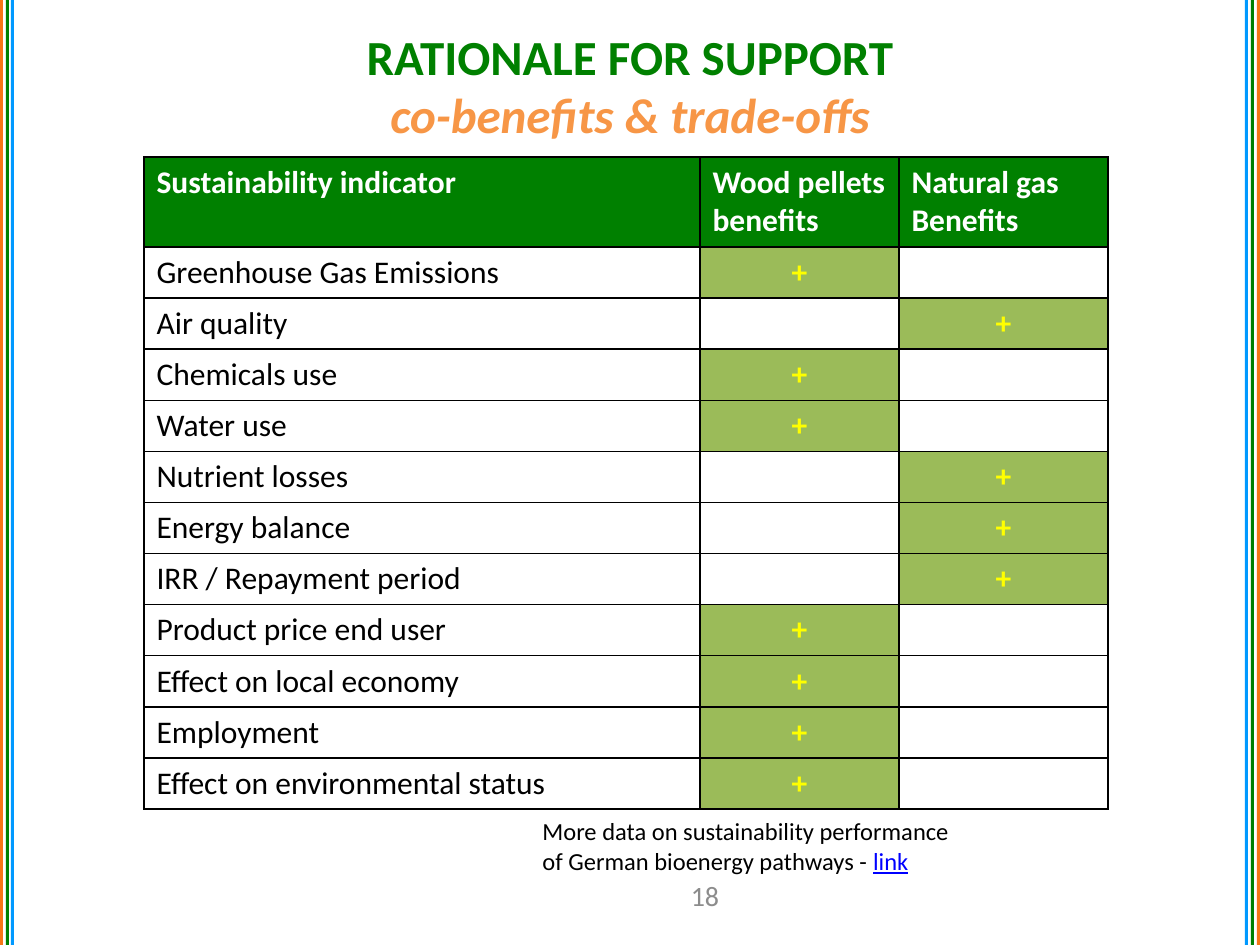
from lxml import etree
from pptx import Presentation
from pptx.dml.color import RGBColor
from pptx.enum.shapes import MSO_SHAPE
from pptx.enum.text import MSO_ANCHOR, PP_ALIGN
from pptx.oxml import parse_xml
from pptx.util import Pt

RECT = MSO_SHAPE.RECTANGLE
MIDDLE = MSO_ANCHOR.MIDDLE
LEFT, CENTER = PP_ALIGN.LEFT, PP_ALIGN.CENTER
NS = "http://schemas.openxmlformats.org/drawingml/2006/main"
PX = 914400 / 126
COLORS = {
    "orange": "F67616", "green": "008000", "blue": "0099FF", "peach": "F79646",
    "olive": "9BBB59", "yellow": "FFFF00", "white": "FFFFFF", "black": "000000",
    "gray": "8C8C8C", "link": "0000FF",
}


def px(*vals):
    return [round(val * PX) for val in vals]


def add_run(para, text, size, color, bold=False, italic=False):
    run = para.add_run()
    run.text = text
    font = run.font
    font.name, font.size = "Calibri", Pt(size)
    font.bold, font.italic = bold, italic
    font.color.rgb = RGBColor.from_string(COLORS[color])
    return run


deck = Presentation()
deck.slide_width, deck.slide_height = px(1260, 945)
slide = deck.slides.add_slide(deck.slide_layouts[5])
shapes = slide.shapes

stripes = [("orange", 0, 1257), ("green", 6, 1251), ("blue", 11, 1245)]
for color, *sides in stripes:
    for left in sides:
        bar = shapes.add_shape(RECT, *px(left, 0, 3, 945))
        bar.shadow.inherit = False
        bar.fill.solid()
        bar.fill.fore_color.rgb = RGBColor.from_string(COLORS[color])
        bar.line.fill.background()

title = shapes.title
title.left, title.top, title.width, title.height = px(63, 6, 1134, 158)
frame = title.text_frame
frame.vertical_anchor = MIDDLE
para = frame.paragraphs[0]
para.alignment = CENTER
add_run(para, "RATIONALE FOR SUPPORT", 28, "green", True)
para.add_line_break()
add_run(para, "co-benefits & trade-offs", 28, "peach", True, True)

heads = [["Sustainability indicator"], ["Wood pellets benefits"], ["Natural gas", "Benefits"]]
WOOD, GAS = 1, 2
rows = [
    ("Greenhouse Gas Emissions", WOOD),
    ("Air quality", GAS),
    ("Chemicals use", WOOD),
    ("Water use", WOOD),
    ("Nutrient losses", GAS),
    ("Energy balance", GAS),
    ("IRR / Repayment period", GAS),
    ("Product price end user", WOOD),
    ("Effect on local economy", WOOD),
    ("Employment", WOOD),
    ("Effect on environmental status", WOOD),
]
grid = [[(lines, "white", "green", True, LEFT) for lines in heads]]
for name, gain in rows:
    line = [([name], "black", None, False, LEFT), None, None]
    line[gain] = (["+"], "yellow", "olive", True, CENTER)
    grid.append(line)

table = shapes.add_table(len(grid), 3, *px(144, 157, 964, 651)).table
table.first_row = table.horz_banding = False
for col, width in zip(table.columns, px(556, 199, 209)):
    col.width = width
for num, row in enumerate(table.rows):
    row.height = px(51 if num else 90)[0]

for num, line in enumerate(grid):
    for pos, item in enumerate(line):
        cell = table.cell(num, pos)
        props = cell._tc.get_or_add_tcPr()
        for side in ("lnL", "lnR", "lnT", "lnB"):
            edge = etree.SubElement(props, f"{{{NS}}}{side}", w="12700")
            edge.append(parse_xml(
                f'<a:solidFill xmlns:a="{NS}"><a:srgbClr val="{COLORS["black"]}"/></a:solidFill>'))
        if item is None:
            cell.fill.background()
            continue
        lines, color, fill, bold, align = item
        if fill:
            cell.fill.solid()
            cell.fill.fore_color.rgb = RGBColor.from_string(COLORS[fill])
        else:
            cell.fill.background()
        frame = cell.text_frame
        for count, text in enumerate(lines):
            para = frame.add_paragraph() if count else frame.paragraphs[0]
            para.alignment = align
            add_run(para, text, 18, color, bold)

note = shapes.add_textbox(*px(530, 810, 436, 72)).text_frame
note.word_wrap = True
para = note.paragraphs[0]
add_run(para, "More data on sustainability performance of German bioenergy pathways - ", 14, "black")
add_run(para, "link", 14, "link").font.underline = True

page = shapes.add_textbox(*px(650, 870, 110, 50)).text_frame
page.word_wrap = True
page.vertical_anchor = MIDDLE
para = page.paragraphs[0]
para.alignment = CENTER
add_run(para, "18", 16, "gray")

deck.save("out.pptx")
